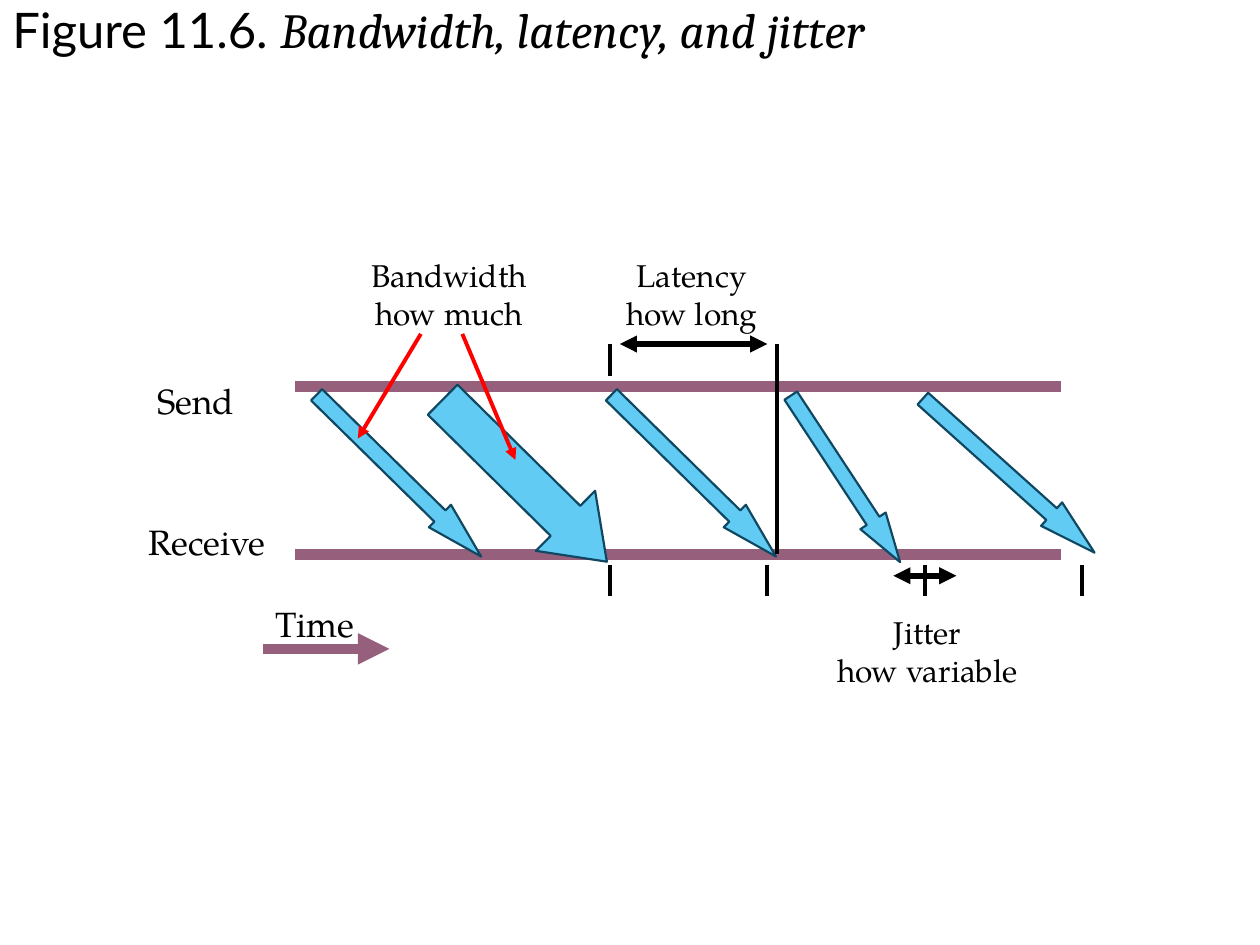
from lxml import etree
from pptx import Presentation
from pptx.dml.color import RGBColor
from pptx.enum import shapes, text
from pptx.oxml import ns
from pptx.util import Pt

BLACK = RGBColor(0x00, 0x00, 0x00)
RED = RGBColor(0xFF, 0x00, 0x00)
PLUM = RGBColor(0x96, 0x60, 0x7D)
SKY = RGBColor(0x61, 0xCB, 0xF4)
NAVY = RGBColor(0x10, 0x48, 0x62)
LABEL_FONT = "TeX Gyre Pagella"

presentation = Presentation()
presentation.slide_width, presentation.slide_height = Pt(720), Pt(540)
slide = presentation.slides.add_slide(presentation.slide_layouts[6])


def add_line(x1, y1, x2, y2, color, width, arrowheads=()):
    """Draw a line; arrowheads names its ends: headEnd (start), tailEnd (end)."""
    line = slide.shapes.add_connector(
        shapes.MSO_CONNECTOR.STRAIGHT, Pt(x1), Pt(y1), Pt(x2), Pt(y2))
    line.line.color.rgb = color
    line.line.width = Pt(width)
    for end in arrowheads:
        etree.SubElement(line.line._get_or_add_ln(), ns.qn(f"a:{end}"), type="triangle")
    etree.SubElement(line._element.spPr, ns.qn("a:effectLst"))


def add_label(left, top, width, height, lines, size):
    label = slide.shapes.add_textbox(Pt(left), Pt(top), Pt(width), Pt(height))
    label.text_frame.word_wrap = False
    paragraph = label.text_frame.paragraphs[0]
    if len(lines) > 1:
        paragraph.alignment = text.PP_ALIGN.CENTER
    for index, line in enumerate(lines):
        if index:
            paragraph.add_line_break()
        run = paragraph.add_run()
        run.text = line
        run.font.name = LABEL_FONT
        run.font.size = Pt(size)
        run.font.color.rgb = BLACK


# Title
title = slide.shapes.add_textbox(Pt(0), Pt(0), Pt(720), Pt(79.2))
title.text_frame.word_wrap = True
paragraph = title.text_frame.paragraphs[0]
paragraph.line_spacing = 0.9
for words, font, italic in (
    ("Figure 11.6. ", "Lato", False),
    ("Bandwidth, latency, and jitter", "Cambria", True),
):
    run = paragraph.add_run()
    run.text = words
    run.font.name = font
    run.font.size = Pt(28)
    run.font.italic = italic
    run.font.color.rgb = BLACK

# Send and receive timelines
add_label(82.8, 213.1, 59, 31.7, ["Send"], 20)
add_label(77.8, 293.8, 83.5, 31.7, ["Receive"], 20)
add_label(150.5, 340.6, 59, 31.7, ["Time"], 20)
for y in (221, 316.8):
    add_line(168.5, y, 606.2, y, PLUM, 6)

# Messages: left, top, width, height, rotation, head length / height
for left, top, width, height, rotation, head in (
    (162, 262.8, 131.8, 18, 44.5, 1.83),
    (234, 250.6, 131.8, 48.2, 44.6, 0.69),
    (330.5, 262.8, 131.8, 18, 44.5, 1.83),
    (426.2, 265, 113.8, 17.3, 56.7, 1.63),
    (510.5, 262.8, 131.8, 18, 41.9, 1.83),
):
    message = slide.shapes.add_shape(
        shapes.MSO_SHAPE.RIGHT_ARROW, Pt(left), Pt(top), Pt(width), Pt(height))
    message.rotation = rotation
    message.adjustments[0] = 0.5
    message.adjustments[1] = head
    message.fill.solid()
    message.fill.fore_color.rgb = SKY
    message.line.color.rgb = NAVY
    message.line.width = Pt(1.25)
    message.shadow.inherit = False

add_line(150.5, 370.8, 222.5, 370.8, PLUM, 6, ["tailEnd"])

# Bandwidth
add_line(240.5, 190.8, 204.5, 250.6, RED, 2.25, ["tailEnd"])
add_line(264.2, 190.8, 294.5, 262.8, RED, 2.25, ["tailEnd"])
add_label(204.5, 142.6, 104.4, 51.1, ["Bandwidth", "how much"], 18)

# Latency
add_line(348.5, 196.6, 348.5, 214.6, BLACK, 2.25)
add_line(444.2, 196.6, 444.2, 316.8, BLACK, 2.25)
add_line(354.2, 196.6, 438.5, 196.6, BLACK, 3.25, ["headEnd", "tailEnd"])
add_label(349.9, 142.6, 90.7, 51.1, ["Latency", "how long"], 18)

# Jitter, with evenly spaced expected arrival times
for tick in range(4):
    x = 348.5 + 90 * tick
    add_line(x, 322.6, x, 340.6, BLACK, 2.25)
add_line(510.5, 329, 546.5, 329, BLACK, 3.25, ["headEnd", "tailEnd"])
add_label(470.2, 347, 119.5, 51.1, ["Jitter", "how variable"], 18)

presentation.save("out.pptx")
